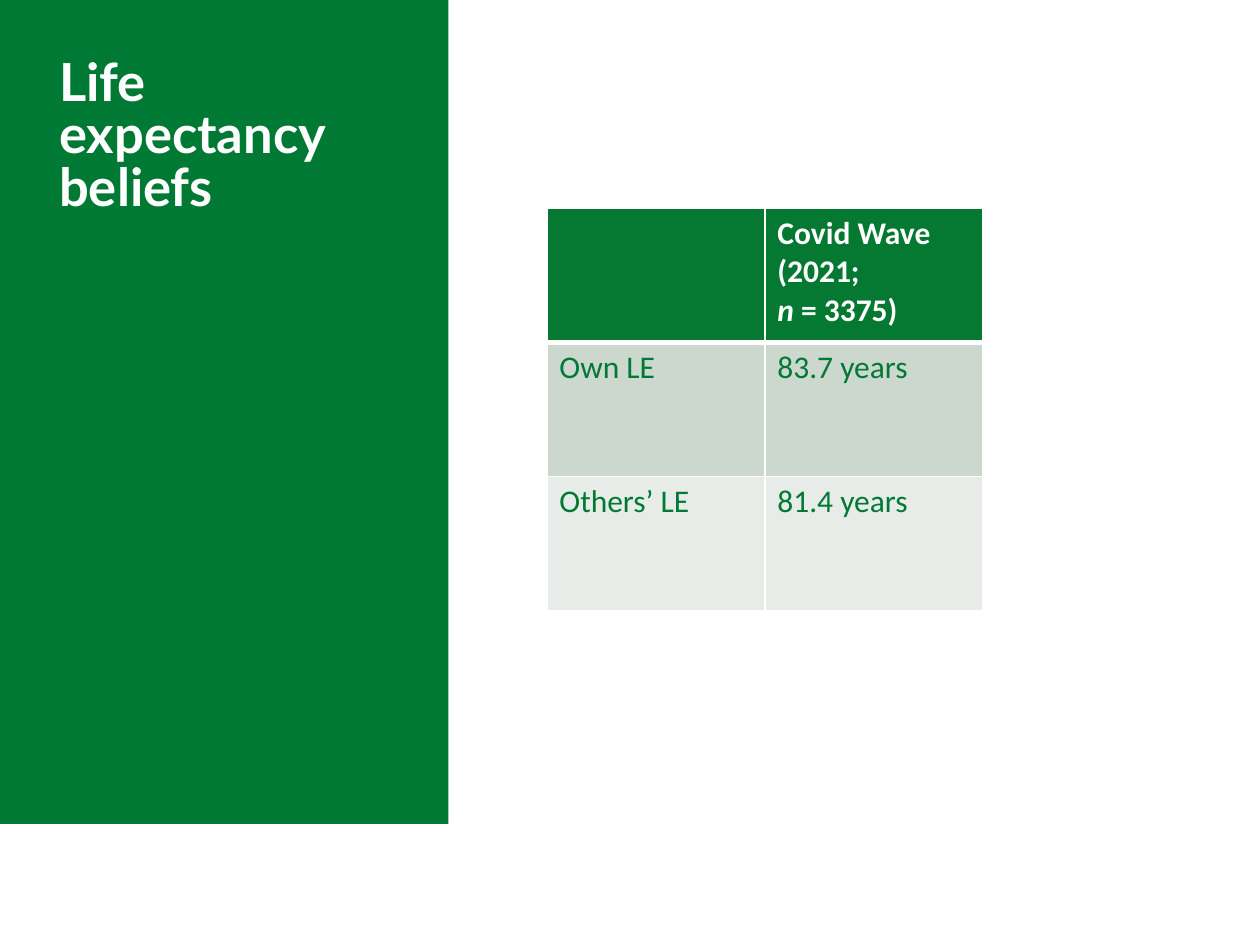
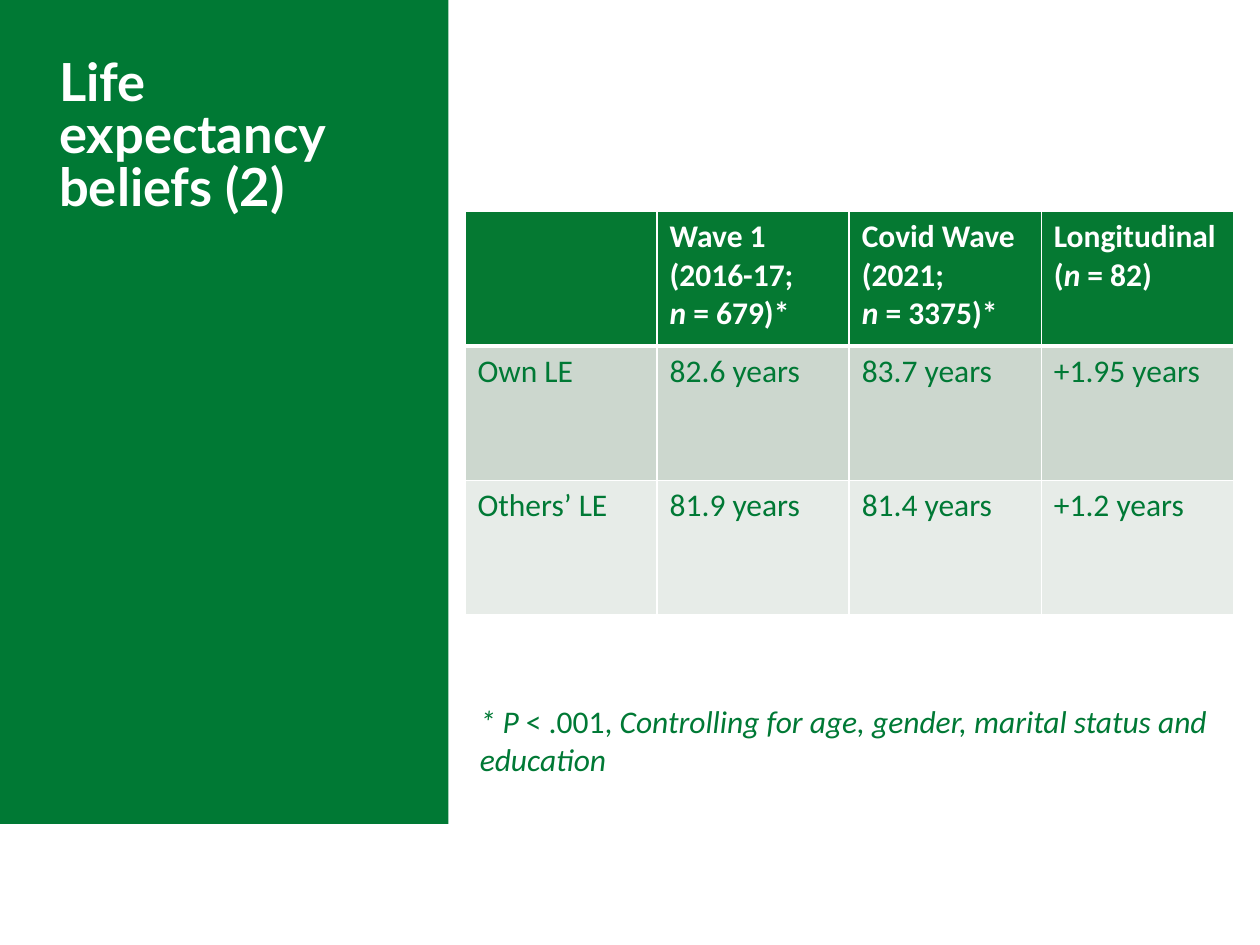
"""Build two slides on life expectancy beliefs, each with a green title band and a table."""
from lxml.etree import SubElement
from pptx import Presentation
from pptx.dml.color import RGBColor
from pptx.enum.shapes import MSO_SHAPE
from pptx.enum.text import MSO_ANCHOR, PP_ALIGN
from pptx.oxml.ns import qn
from pptx.util import Inches, Pt

WHITE, BAND_GREEN, HEADER_GREEN, TEXT_GREEN = "FFFFFF", "007934", "057932", "007935"
ROW_FILLS = [HEADER_GREEN, "CCD7CE", "E7ECE8"]


def rgb(hex_code):
    return RGBColor.from_string(hex_code)


def add_runs(paragraph, runs, color, font_name="Calibri", size=18, bold=False):
    for text, italic in runs:
        run = paragraph.add_run()
        run.text = text
        run.font.name, run.font.size = font_name, Pt(size)
        run.font.bold, run.font.italic = bold, italic
        run.font.color.rgb = rgb(color)


wave_1 = [[("Wave 1", False)], [("(2016-17;", False)], [("n ", True), ("= 679)*", False)]]
covid_wave = [[("Covid Wave", False)], [("(2021;", False)], [("n ", True), ("= 3375)", False)]]
covid_wave_starred = covid_wave[:2] + [[("n ", True), ("= 3375)*", False)]]
longitudinal = [[("Longitudinal (", False), ("n ", True), ("= 82)", False)]]
footnote = [
    ("* P ", True),
    ("< .001, ", False),
    ("Controlling for age, gender, marital status and education", True),
]

pages = [
    {
        "title": "Life expectancy beliefs",
        "place": (4.34, 1.65, 3.46, 3.2),
        "headers": [covid_wave],
        "rows": [["Own LE", "83.7 years"], ["Others’ LE", "81.4 years"]],
        "footnote": None,
    },
    {
        "title": "Life expectancy beliefs (2)",
        "place": (3.69, 1.68, 6.1, 3.2),
        "headers": [wave_1, covid_wave_starred, longitudinal],
        "rows": [
            ["Own LE", "82.6 years", "83.7 years", "+1.95 years"],
            ["Others’ LE", "81.9 years", "81.4 years", "+1.2 years"],
        ],
        "footnote": footnote,
    },
]

prs = Presentation()
prs.slide_width, prs.slide_height = Inches(10), Inches(7.5)

for page in pages:
    slide = prs.slides.add_slide(prs.slide_layouts[5])

    band = slide.shapes.add_shape(MSO_SHAPE.RECTANGLE, 0, 0, Inches(3.56), Inches(6.54))
    band.shadow.inherit = False
    band.fill.solid()
    band.fill.fore_color.rgb = rgb(BAND_GREEN)
    band.line.fill.background()

    title = slide.shapes.title
    title.element.addprevious(band.element)
    title.left, title.top = Inches(0.47), Inches(0.47)
    title.width, title.height = Inches(2.83), Inches(1.46)
    frame = title.text_frame
    frame.margin_left = frame.margin_top = frame.margin_right = frame.margin_bottom = 0
    frame.word_wrap = True
    frame.vertical_anchor = MSO_ANCHOR.TOP
    heading = frame.paragraphs[0]
    heading.alignment = PP_ALIGN.LEFT
    heading.line_spacing = Pt(30)
    add_runs(heading, [(page["title"], False)], WHITE, "Lato", 30, True)

    header_row = [[]] + page["headers"]
    body_rows = [[[[(text, False)]] for text in row] for row in page["rows"]]
    content = [header_row] + body_rows
    place = [Inches(length) for length in page["place"]]
    beliefs = slide.shapes.add_table(len(content), len(header_row), *place).table
    for r, row in enumerate(content):
        for c, lines in enumerate(row):
            cell = beliefs.cell(r, c)
            properties = cell._tc.get_or_add_tcPr()
            for side in "LRTB":
                thick = (r, side) in [(0, "B"), (1, "T")]
                border = SubElement(properties, qn(f"a:ln{side}"), w=str(Pt(3 if thick else 1)))
                SubElement(SubElement(border, qn("a:solidFill")), qn("a:srgbClr"), val=WHITE)
            cell.fill.solid()
            cell.fill.fore_color.rgb = rgb(ROW_FILLS[r])
            for i, runs in enumerate(lines):
                frame = cell.text_frame
                paragraph = frame.add_paragraph() if i else frame.paragraphs[0]
                add_runs(paragraph, runs, TEXT_GREEN if r else WHITE, bold=r == 0)

    if page["footnote"]:
        note = slide.shapes.add_textbox(Inches(3.71), Inches(5.52), Inches(6.06), Inches(0.71))
        note.text_frame.word_wrap = True
        add_runs(note.text_frame.paragraphs[0], page["footnote"], TEXT_GREEN)

prs.save("out.pptx")
